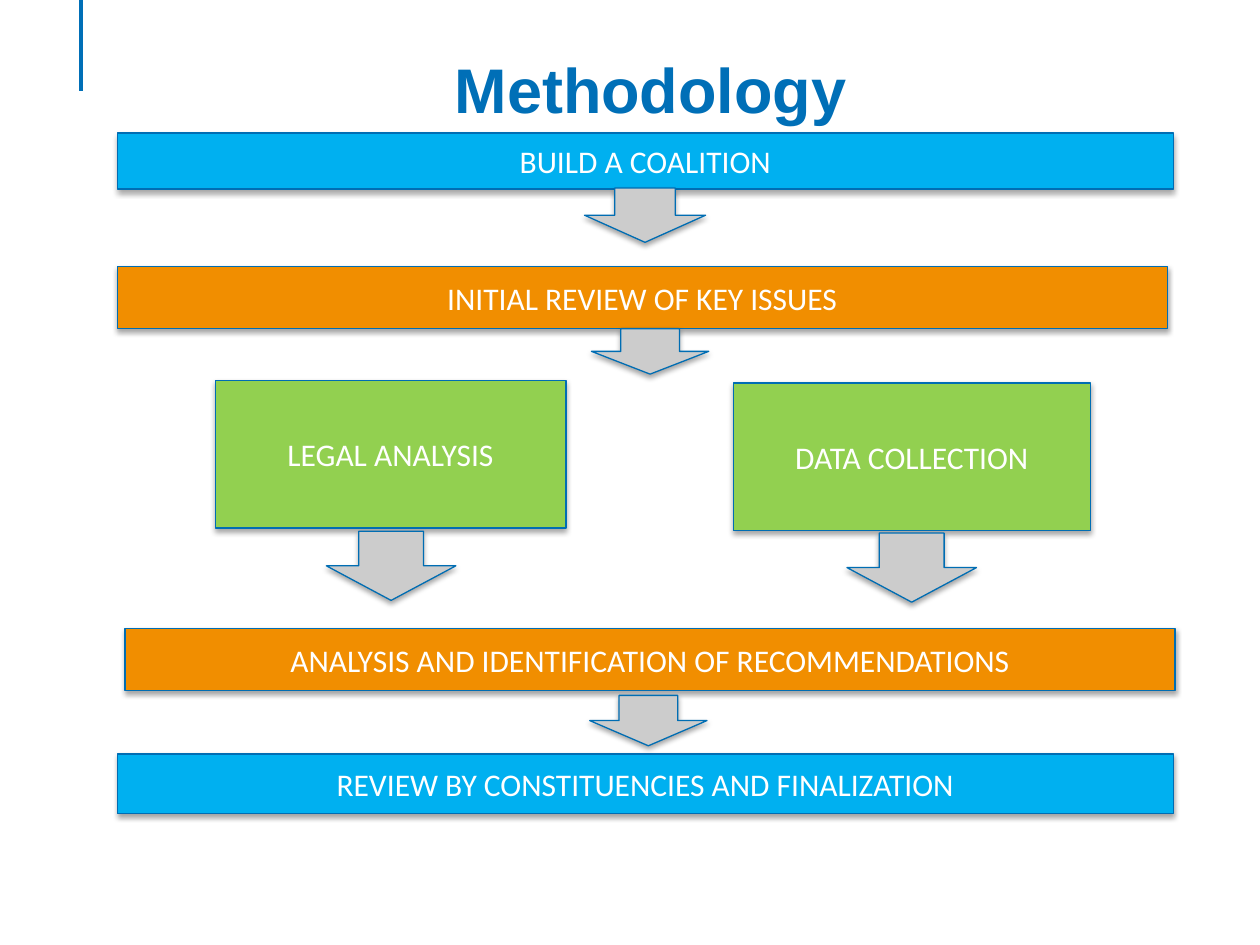
from lxml import etree
from pptx import Presentation
from pptx.dml.color import RGBColor
from pptx.enum.shapes import MSO_CONNECTOR, MSO_SHAPE
from pptx.enum.text import MSO_ANCHOR, PP_ALIGN
from pptx.oxml.ns import qn
from pptx.util import Pt

RECT = MSO_SHAPE.RECTANGLE
DOWN_ARROW = MSO_SHAPE.DOWN_ARROW
STRAIGHT = MSO_CONNECTOR.STRAIGHT
CENTER = PP_ALIGN.CENTER
MIDDLE = MSO_ANCHOR.MIDDLE

COLORS = {
    "title": "006FB7",
    "outline": "006DB3",
    "blue": "00B0F0",
    "orange": "F18E00",
    "green": "92D050",
    "gray": "CCCCCC",
    "white": "FFFFFF",
    "shadow": "000000",
}

STEPS = [
    ("BUILD A COALITION", "blue", 67, 76, 603.5, 32),
    ("INITIAL REVIEW OF KEY ISSUES", "orange", 67, 152.5, 600, 35.2),
    ("LEGAL ANALYSIS", "green", 123, 217.3, 200.4, 84.4),
    ("DATA COLLECTION", "green", 419, 218.8, 204, 84.4),
    ("ANALYSIS AND IDENTIFICATION OF RECOMMENDATIONS", "orange",
     71.5, 359.3, 600, 35.2),
    ("REVIEW BY CONSTITUENCIES AND FINALIZATION", "blue",
     67, 430.8, 603.5, 34.2),
]

ARROWS = [
    (334, 107.5, 69.2, 31),
    (338, 187.8, 67, 26),
    (186.5, 303.6, 74, 39.5),
    (484, 304.6, 74, 39.5),
    (337, 397.4, 67, 28.8),
]


def rgb(name):
    return RGBColor.from_string(COLORS[name])


def write(tf, text, font, size, color, bold=False):
    tf.word_wrap = True
    p = tf.paragraphs[0]
    p.text = text
    p.alignment = CENTER
    p.font.name = font
    p.font.size = Pt(size)
    p.font.bold = bold
    p.font.color.rgb = rgb(color)


def add_shadow(sp):
    sp.shadow.inherit = False
    effects = sp._element.spPr.find(qn("a:effectLst"))
    outer = etree.SubElement(
        effects, qn("a:outerShdw"), blurRad=str(Pt(3.1)), dist=str(Pt(1.8)),
        dir="5400000", rotWithShape="0")
    color = etree.SubElement(outer, qn("a:srgbClr"), val=COLORS["shadow"])
    etree.SubElement(color, qn("a:alpha"), val="35000")


def add_block(s, kind, fill, *box):
    sp = s.shapes.add_shape(kind, *map(Pt, box))
    sp.fill.solid()
    sp.fill.fore_color.rgb = rgb(fill)
    sp.line.color.rgb = rgb("outline")
    sp.line.width = Pt(0.75)
    add_shadow(sp)
    return sp


def add_step(s, text, fill, *box):
    sp = add_block(s, RECT, fill, *box)
    sp.text_frame.vertical_anchor = MIDDLE
    write(sp.text_frame, text, "Calibri", 18, "white")


def add_title(s, text):
    sp = s.shapes.add_textbox(Pt(56), Pt(25.5), Pt(631.5), Pt(82))
    write(sp.text_frame, text, "Arial", 36, "title", bold=True)


def add_accent_line(s):
    line = s.shapes.add_connector(STRAIGHT, Pt(46.3), Pt(0), Pt(46.3), Pt(52))
    line.line.color.rgb = rgb("title")
    line.line.width = Pt(2)
    etree.SubElement(line._element.spPr, qn("a:effectLst"))


def main():
    prs = Presentation()
    prs.slide_width, prs.slide_height = Pt(720), Pt(540)
    s = prs.slides.add_slide(prs.slide_layouts[6])
    add_accent_line(s)
    add_title(s, "Methodology")
    for step in STEPS:
        add_step(s, *step)
    for box in ARROWS:
        add_block(s, DOWN_ARROW, "gray", *box)
    prs.save("out.pptx")


if __name__ == "__main__":
    main()
